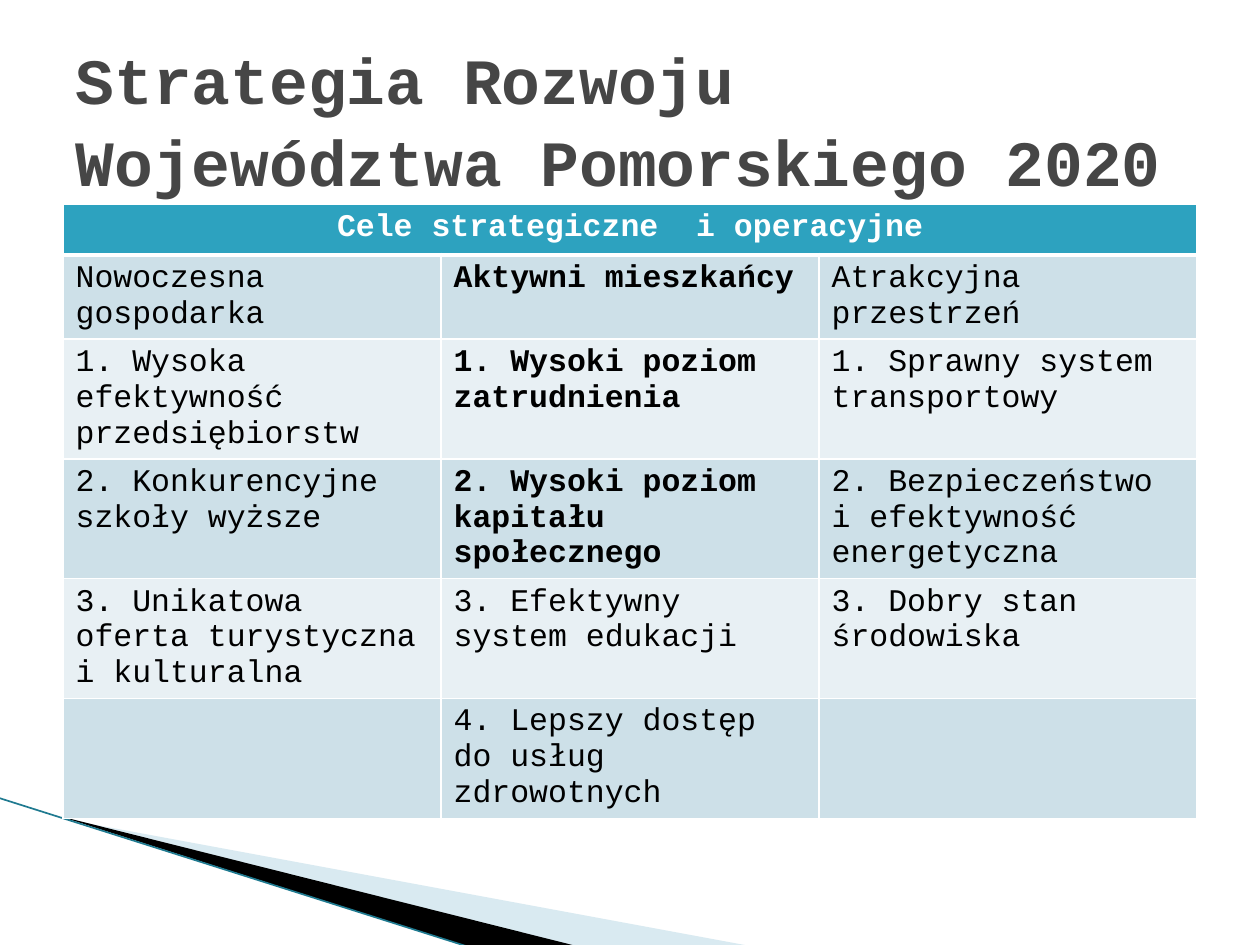
from lxml import etree
from pptx import Presentation
from pptx.dml.color import RGBColor
from pptx.enum.shapes import MSO_CONNECTOR
from pptx.enum.text import MSO_ANCHOR, MSO_AUTO_SIZE, PP_ALIGN
from pptx.oxml import parse_xml
from pptx.oxml.ns import nsdecls, qn
from pptx.util import Pt

PX = 914400 / 126
C = {"title": "464646", "head": "2DA2BF", "odd": "CDE0E8", "even": "E8F0F4",
     "white": "FFFFFF", "black": "000000", "wedge": "A0CBDC", "line": "1F7A90"}


def px(*values):
    return [round(v * PX) for v in values]


def write(tf, text, size=18, color="black", bold=False, align=PP_ALIGN.LEFT, spacing=None):
    p = tf.paragraphs[0]
    p.alignment = align
    p.line_spacing = spacing
    r = p.add_run()
    r.text = text
    r.font.name = "Courier New"
    r.font.size = Pt(size)
    r.font.bold = bold
    r.font.color.rgb = RGBColor.from_string(C[color])


prs = Presentation()
prs.slide_width, prs.slide_height = px(1260, 945)
s = prs.slides.add_slide(prs.slide_layouts[5])

# Title
title = s.shapes.title
title.left, title.top, title.width, title.height = px(63, 38, 1134, 158)
tf = title.text_frame
tf.word_wrap = True
tf.auto_size = MSO_AUTO_SIZE.NONE
tf.vertical_anchor = MSO_ANCHOR.MIDDLE
write(tf, "Strategia Rozwoju Województwa Pomorskiego 2020",
      size=36.9, color="title", bold=True, spacing=1.07)

# Corner wedges
wedges = [
    ("wedge", 40, [(69, 820), (750, 946), (575, 946), (69, 819)]),
    ("black", 100, [(67, 818), (576, 946), (469, 947), (68, 819)]),
]
for color, opacity, points in wedges:
    fb = s.shapes.build_freeform(*points[0], scale=PX)
    fb.add_line_segments(points[1:], close=True)
    sp = fb.convert_to_shape()
    sp.shadow.inherit = False
    sp.fill.solid()
    sp.fill.fore_color.rgb = RGBColor.from_string(C[color])
    sp.line.fill.background()
    if opacity < 100:
        clr = sp.fill._xPr.find(".//" + qn("a:srgbClr"))
        etree.SubElement(clr, qn("a:alpha"), val=str(opacity * 1000))

edge = s.shapes.add_connector(MSO_CONNECTOR.STRAIGHT, *px(-1, 798, 469, 947))
edge.line.color.rgb = RGBColor.from_string(C["line"])
edge.line.width = Pt(0.95)
etree.SubElement(edge._element.spPr, qn("a:effectLst"))

# Goals table
rows = [
    ["Cele strategiczne  i operacyjne", "", ""],
    ["Nowoczesna gospodarka", "Aktywni mieszkańcy", "Atrakcyjna przestrzeń"],
    ["1. Wysoka efektywność przedsiębiorstw", "1. Wysoki poziom zatrudnienia",
     "1. Sprawny system transportowy"],
    ["2. Konkurencyjne szkoły wyższe", "2. Wysoki poziom kapitału społecznego",
     "2. Bezpieczeństwo i efektywność energetyczna"],
    ["3. Unikatowa oferta turystyczna i kulturalna", "3. Efektywny system edukacji",
     "3. Dobry stan środowiska"],
    ["", "4. Lepszy dostęp do usług zdrowotnych", ""],
]
bold_cells = {(1, 1), (2, 1), (3, 1)}
tbl = s.shapes.add_table(len(rows), 3, *px(63, 204, 1134, 51 * len(rows))).table
tbl.cell(0, 0).merge(tbl.cell(0, 2))
for i, row in enumerate(rows):
    for j, text in enumerate(row):
        cell = tbl.cell(i, j)
        tcPr = cell._tc.get_or_add_tcPr()
        for side in "LRTB":
            thick = (i == 0 and side == "B") or (i == 1 and side == "T")
            tcPr.append(parse_xml(
                f'<a:ln{side} {nsdecls("a")} w="{Pt(3 if thick else 1)}"><a:solidFill>'
                f'<a:srgbClr val="{C["white"]}"/></a:solidFill></a:ln{side}>'))
        cell.fill.solid()
        fill = "head" if i == 0 else "odd" if i % 2 else "even"
        cell.fill.fore_color.rgb = RGBColor.from_string(C[fill])
        if text and i == 0:
            write(cell.text_frame, text, color="white", bold=True, align=PP_ALIGN.CENTER)
        elif text:
            write(cell.text_frame, text, bold=(i, j) in bold_cells)

prs.save("out.pptx")
